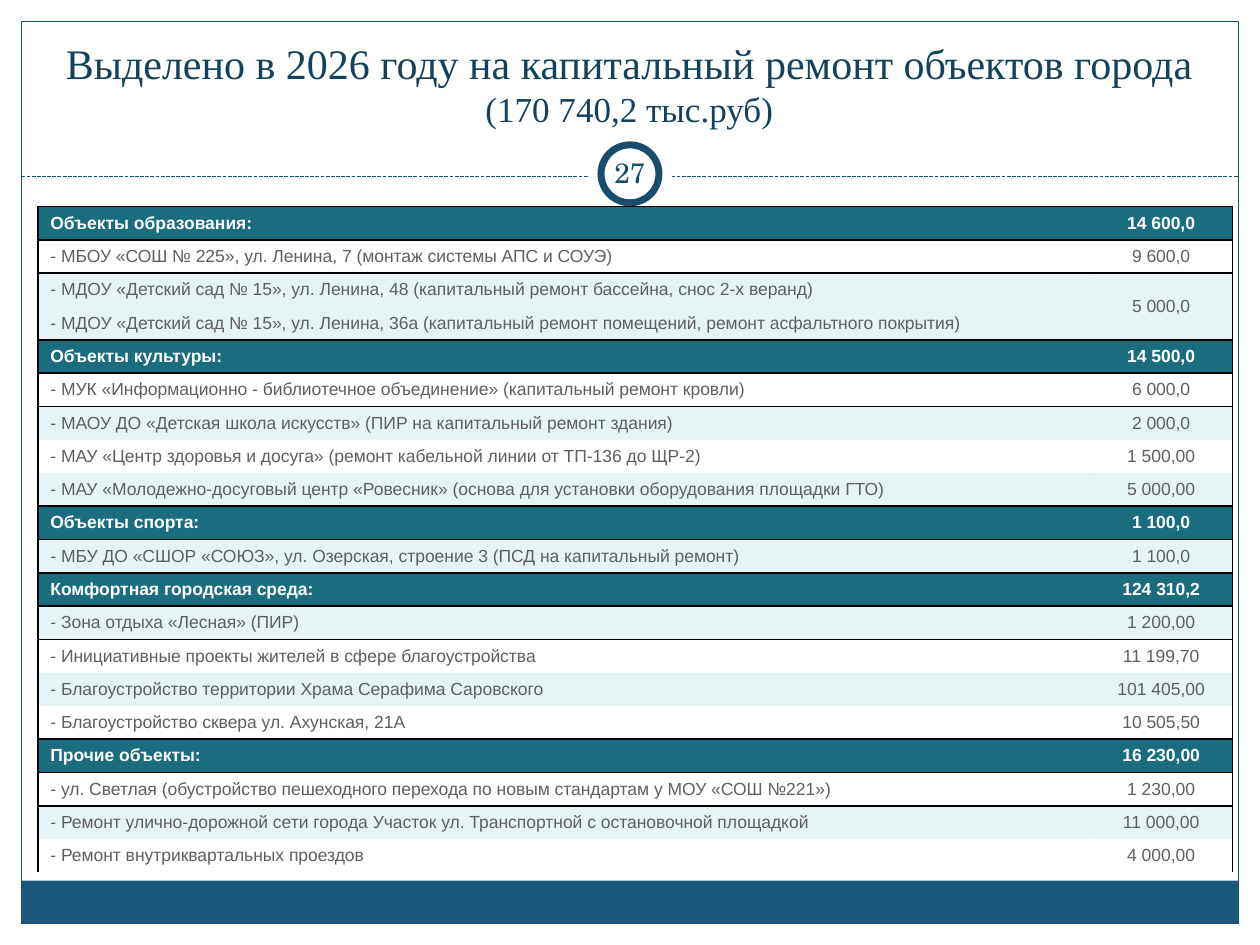
from lxml.etree import SubElement
from pptx import Presentation
from pptx.dml.color import RGBColor
from pptx.enum.dml import MSO_LINE_DASH_STYLE as Dash
from pptx.enum.shapes import MSO_CONNECTOR_TYPE as Connector, MSO_SHAPE as Shape
from pptx.enum.text import MSO_ANCHOR as Anchor, PP_ALIGN as Align
from pptx.oxml import parse_xml
from pptx.oxml.ns import nsdecls, qn
from pptx.util import Inches, Pt

WIDTH, HEIGHT = 10, 7.5
MARGIN = 0.17
INNER = WIDTH - 2 * MARGIN
DIVIDER_Y = 1.4
COLORS = {
    "white": "FFFFFF", "frame": "184E6D", "footer": "1B587C", "title": "14425D",
    "group": "1A6D7E", "band": "84C9CE", "body": "5F5F5F", "border": "000000",
}
NO_STYLE = "{2D5ABB26-0587-4C30-8999-92F81FD0307C}"
COLUMN_WIDTHS = (8.35, 1.13)
ROW_HEIGHT = 5.29 / 20

# Each group: name, total, line above it, and items; an amount of None joins the cell above.
GROUPS = [
    ("Объекты образования:", "14 600,0", True, [
        ("- МБОУ «СОШ № 225», ул. Ленина, 7 (монтаж системы АПС и СОУЭ)", "9 600,0"),
        ("- МДОУ «Детский сад № 15», ул. Ленина, 48 (капитальный ремонт бассейна, снос 2-х веранд)", "5 000,0"),
        ("- МДОУ «Детский сад № 15», ул. Ленина, 36а (капитальный ремонт помещений, ремонт асфальтного покрытия)", None),
    ]),
    ("Объекты культуры:", "14 500,0", True, [
        ("- МУК «Информационно - библиотечное объединение» (капитальный ремонт кровли)", "6 000,0"),
        ("- МАОУ ДО «Детская школа искусств» (ПИР на капитальный ремонт здания)", "2 000,0"),
        ("- МАУ «Центр здоровья и досуга» (ремонт кабельной линии от ТП-136 до ЩР-2)", "1 500,00"),
        ("- МАУ «Молодежно-досуговый центр «Ровесник» (основа для установки оборудования площадки ГТО)", "5 000,00"),
    ]),
    ("Объекты спорта:", "1 100,0", True, [
        ("- МБУ ДО «СШОР «СОЮЗ», ул. Озерская, строение 3 (ПСД на капитальный ремонт)", "1 100,0"),
    ]),
    ("Комфортная городская среда:", "124 310,2", False, [
        ("- Зона отдыха «Лесная» (ПИР)", "1 200,00"),
        ("- Инициативные проекты жителей в сфере благоустройства", "11 199,70"),
        ("- Благоустройство территории Храма Серафима Саровского", "101 405,00"),
        ("- Благоустройство сквера ул. Ахунская, 21А", "10 505,50"),
    ]),
    ("Прочие объекты:", "16 230,00", True, [
        ("- ул. Светлая (обустройство пешеходного перехода по новым стандартам у МОУ «СОШ №221»)", "1 230,00"),
        ("- Ремонт улично-дорожной сети города Участок ул. Транспортной с остановочной площадкой", "11 000,00"),
        ("- Ремонт внутриквартальных проездов", "4 000,00"),
    ]),
]


def color(name):
    return RGBColor.from_string(COLORS[name])


def write(paragraph, text, size=10, font="Arial", ink="body", bold=False, align=Align.LEFT):
    paragraph.alignment = align
    run = paragraph.add_run()
    run.text = text
    run.font.size, run.font.name, run.font.bold = Pt(size), font, bold
    run.font.color.rgb = color(ink)


def add_text_box(slide, left, top, width, height, anchor, pad_x=0.1):
    """Add an empty wrapped text box and return its first paragraph."""
    frame = slide.shapes.add_textbox(*map(Inches, (left, top, width, height))).text_frame
    frame.word_wrap = True
    frame.vertical_anchor = anchor
    frame.margin_left = frame.margin_right = Inches(pad_x)
    return frame.paragraphs[0]


def add_shape(slide, kind, left, top, width, height, fill=None, line=None, weight=0.75):
    shape = slide.shapes.add_shape(kind, *map(Inches, (left, top, width, height)))
    shape.shadow.inherit = False
    if fill:
        shape.fill.solid()
        shape.fill.fore_color.rgb = color(fill)
    else:
        shape.fill.background()
    if line:
        shape.line.color.rgb = color(line)
        shape.line.width = Pt(weight)
    else:
        shape.line.fill.background()


def add_circle(slide, diameter, **style):
    """Add a circle centred on the slide, slightly above the divider."""
    add_shape(slide, Shape.OVAL, (WIDTH - diameter) / 2, DIVIDER_Y - 0.02 - diameter / 2,
              diameter, diameter, **style)


def add_divider(slide):
    ends = (MARGIN, DIVIDER_Y, WIDTH - MARGIN, DIVIDER_Y)
    divider = slide.shapes.add_connector(Connector.STRAIGHT, *map(Inches, ends))
    divider.line.color.rgb = color("frame")
    divider.line.width = Pt(0.75)
    divider.line.dash_style = Dash.SQUARE_DOT
    SubElement(divider.element.spPr, qn("a:effectLst"))


def add_frame(slide):
    add_shape(slide, Shape.RECTANGLE, MARGIN, 6.99, INNER, 0.34, fill="footer")
    add_shape(slide, Shape.RECTANGLE, MARGIN, MARGIN, INNER, HEIGHT - 2 * MARGIN, line="frame")
    add_divider(slide)
    add_circle(slide, 0.67, fill="white")
    add_circle(slide, 0.46, fill="white", line="frame", weight=4)


def fill_cell(cell, name, opacity=100):
    cell.fill.solid()
    cell.fill.fore_color.rgb = color(name)
    if opacity < 100:
        tint = cell.fill._xPr.find(".//" + qn("a:srgbClr"))
        SubElement(tint, qn("a:alpha"), val=str(opacity * 1000))


def set_borders(cell, sides):
    """Draw the given sides, which follow the schema order L, R, T, B."""
    properties = cell._tc.get_or_add_tcPr()
    for position, side in enumerate(sides):
        properties.insert(position, parse_xml(
            f'<a:ln{side} {nsdecls("a")} w="12700"><a:solidFill>'
            f'<a:srgbClr val="{COLORS["border"]}"/></a:solidFill></a:ln{side}>'))


def table_rows():
    """Flatten the groups to (label, amount, is header, has line above)."""
    rows = []
    for name, total, line_above, items in GROUPS:
        rows.append((name, total, True, line_above))
        rows += [(label, amount, False, index == 0)
                 for index, (label, amount) in enumerate(items)]
    return rows


def add_budget_table(slide):
    rows = table_rows()
    size = (0.3, 1.64, sum(COLUMN_WIDTHS), ROW_HEIGHT * len(rows))
    table = slide.shapes.add_table(len(rows), 2, *map(Inches, size)).table
    table.first_row = table.horz_banding = False
    table._tbl.tblPr.find(qn("a:tableStyleId")).text = NO_STYLE
    for column, width in zip(table.columns, COLUMN_WIDTHS):
        column.width = Inches(width)

    lines = [row[3] for row in rows] + [False]
    for index, (label, amount, is_header, line_above) in enumerate(rows):
        table.rows[index].height = Inches(ROW_HEIGHT)
        edges = "T" * line_above + "B" * lines[index + 1]
        banded = index % 2 == 0 or amount is None
        for column, text in enumerate((label, amount)):
            cell = table.cell(index, column)
            if is_header:
                fill_cell(cell, "group")
            elif banded:
                fill_cell(cell, "band", opacity=20)
            else:
                fill_cell(cell, "white")
            set_borders(cell, "LR"[column] + edges)
            cell.vertical_anchor = Anchor.MIDDLE
            if text is None:
                table.cell(index - 1, column).merge(cell)
                continue
            write(cell.text_frame.paragraphs[0], text, bold=is_header,
                  ink="white" if is_header else "body",
                  align=Align.CENTER if column else Align.LEFT)


def add_title(slide):
    paragraph = add_text_box(slide, 0.33, 0.25, 9.33, 0.83, Anchor.BOTTOM)
    style = dict(font="Times New Roman", ink="title", align=Align.CENTER)
    write(paragraph, "Выделено в 2026 году на капитальный ремонт объектов города ", size=24, **style)
    write(paragraph, "(170 740,2 тыс.руб)", size=20, **style)


def add_page_number(slide):
    paragraph = add_text_box(slide, 4.75, 1.13, 0.5, 0.48, Anchor.MIDDLE, pad_x=0.05)
    write(paragraph, "27", size=16, font="TeX Gyre Schola", ink="frame", align=Align.CENTER)


def main():
    presentation = Presentation()
    presentation.slide_width, presentation.slide_height = Inches(WIDTH), Inches(HEIGHT)
    slide = presentation.slides.add_slide(presentation.slide_layouts[6])
    add_frame(slide)
    add_budget_table(slide)
    add_title(slide)
    add_page_number(slide)
    presentation.save("out.pptx")


if __name__ == "__main__":
    main()
